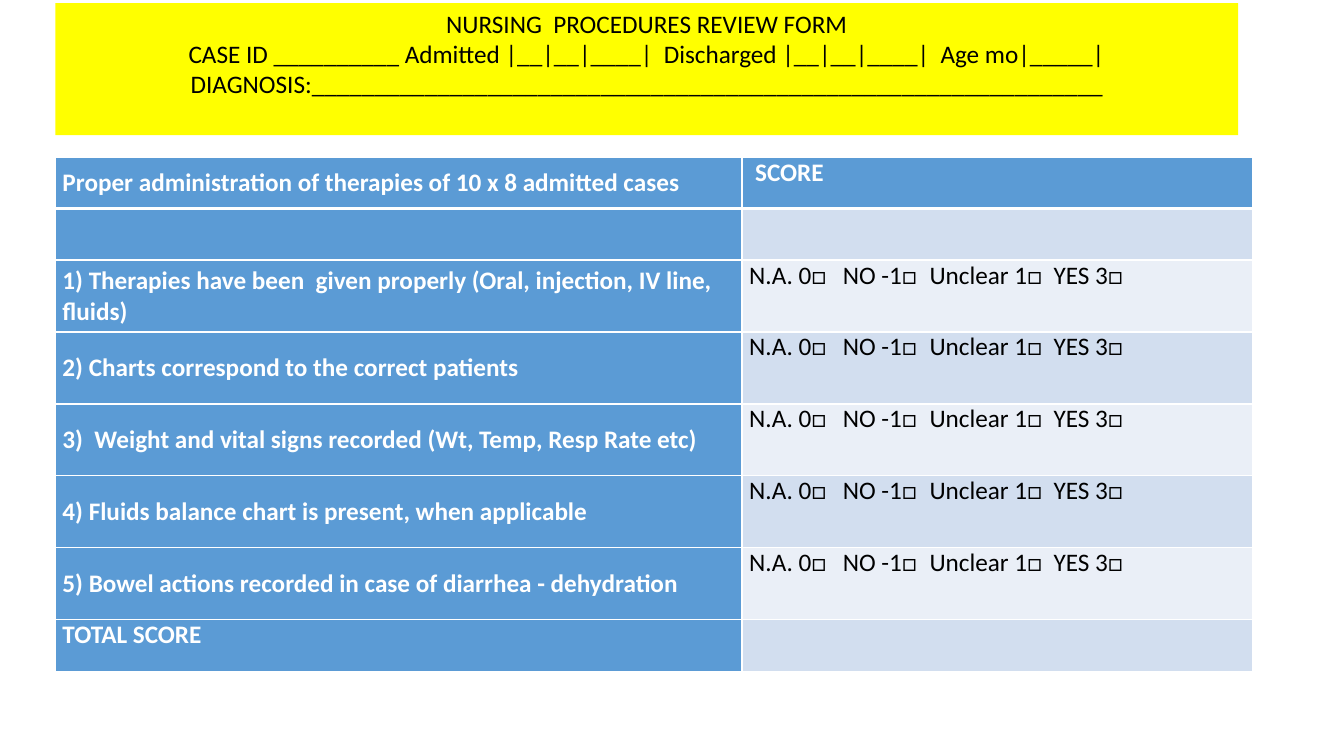
from lxml.etree import SubElement as Sub
from pptx import Presentation
from pptx.dml.color import RGBColor
from pptx.enum.shapes import MSO_SHAPE as Shape
from pptx.enum.text import MSO_ANCHOR as Anchor, PP_ALIGN as Align
from pptx.oxml.ns import qn
from pptx.util import Inches, Pt

BLUE, WHITE, BLACK, YELLOW = "5B9BD5", "FFFFFF", "000000", "FFFF00"
BANDS = ["D2DEEF", "EAEFF7"]
UNIT = 0.1
STOPS = [0.93, 1.79, 3.02]


def color(code):
    return RGBColor.from_string(code)


def apply(item, values):
    for name, value in values.items():
        setattr(item, name, value)


class Form:
    def __init__(self, wide, high):
        self.deck = Presentation()
        apply(self.deck, {"slide_width": Inches(wide), "slide_height": Inches(high)})
        self.slide = self.deck.slides.add_slide(self.deck.slide_layouts[6])
        self.font = {"name": "Calibri", "size": Pt(18)}

    def grid(self, *cells):
        return [Inches(round(cell * UNIT, 3)) for cell in cells]

    def label(self, para, text, ink, bold=False):
        para.text = text
        apply(para.font, {**self.font, "bold": bold})
        para.font.color.rgb = color(ink)

    def banner(self, place, lines):
        box = self.slide.shapes.add_shape(Shape.RECTANGLE, *self.grid(*place))
        box.shadow.inherit = False
        box.fill.solid()
        box.fill.fore_color.rgb = color(YELLOW)
        box.line.fill.background()
        frame = box.text_frame
        apply(frame, {"word_wrap": True, "vertical_anchor": Anchor.TOP})
        for i, line in enumerate(lines):
            para = frame.add_paragraph() if i else frame.paragraphs[0]
            para.alignment = Align.CENTER
            self.label(para, line, BLACK)

    def tabs(self, para):
        stops = Sub(para._p.get_or_add_pPr(), qn("a:tabLst"))
        for stop in STOPS:
            Sub(stops, qn("a:tab"), pos=str(Inches(stop)), algn="l")

    def edges(self, cell, top, base):
        props = cell._tc.get_or_add_tcPr()
        for side, width in zip("LRTB", (1, 1, top, base)):
            line = Sub(props, qn("a:ln" + side), w=str(Pt(width)))
            fill = Sub(line, qn("a:solidFill"))
            Sub(fill, qn("a:srgbClr"), val=WHITE)

    def table(self, left, top, cols, rows, texts):
        place = self.grid(left, top, sum(cols), sum(rows))
        table = self.slide.shapes.add_table(len(rows), len(cols), *place).table
        apply(table, {"first_row": False, "horz_banding": False})
        for col, wide in zip(table.columns, self.grid(*cols)):
            col.width = wide
        for row, high in zip(table.rows, self.grid(*rows)):
            row.height = high
        last = len(rows) - 1
        for i, pair in enumerate(texts):
            for j, text in enumerate(pair):
                cell = table.cell(i, j)
                head = i == 0 or j == 0
                middle = j == 0 and i < last
                apply(cell, {
                    "margin_left": Inches(0.13 if i == 0 and j else 0.07),
                    "margin_right": Inches(0.07),
                    "margin_top": 0, "margin_bottom": 0,
                    "vertical_anchor": Anchor.MIDDLE if middle else Anchor.TOP,
                })
                self.edges(cell, 3 if i == 1 else 1, 3 if i == 0 else 1)
                cell.fill.solid()
                cell.fill.fore_color.rgb = color(BLUE if head else BANDS[(i + 1) % 2])
                para = cell.text_frame.paragraphs[0]
                if "\t" in text:
                    self.tabs(para)
                self.label(para, text, WHITE if head else BLACK, head)


def main():
    form = Form(13.33, 7.5)
    form.banner((5.5, 0.3, 117.3, 13.1), [
        "NURSING  PROCEDURES REVIEW FORM",
        "CASE ID __________ Admitted |__|__|____|  Discharged |__|__|____|  Age mo|_____|",
        "DIAGNOSIS:" + "_" * 63,
    ])
    score = "N.A. 0□\tNO -1□\tUnclear 1□\tYES 3□"
    items = [
        "1) Therapies have been  given properly (Oral, injection, IV line, fluids)",
        "2) Charts correspond to the correct patients",
        "3)  Weight and vital signs recorded (Wt, Temp, Resp Rate etc)",
        "4) Fluids balance chart is present, when applicable",
        "5) Bowel actions recorded in case of diarrhea - dehydration",
    ]
    texts = [
        ("Proper administration of therapies of 10 x 8 admitted cases", "SCORE"),
        ("", ""),
        *((item, score) for item in items),
        ("TOTAL SCORE", ""),
    ]
    rows = [5.1] * 2 + [7.14] * len(items) + [5.1]
    form.table(5.5, 15.6, [68.1, 50.6], rows, texts)
    form.deck.save("out.pptx")


if __name__ == "__main__":
    main()
